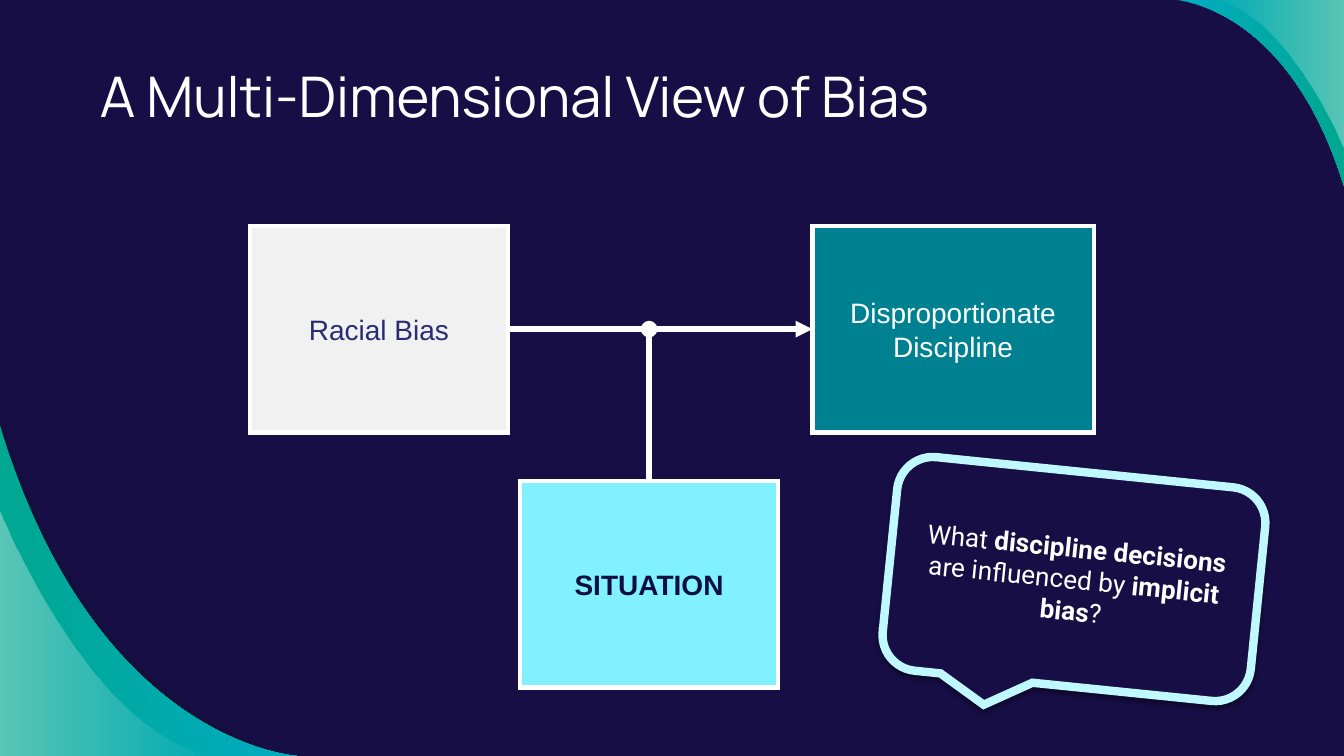
"""Build the slide on the dimensions of bias: three linked boxes and a callout."""
from lxml.etree import SubElement
from pptx import Presentation
from pptx.dml.color import RGBColor
from pptx.enum.shapes import MSO_CONNECTOR, MSO_SHAPE
from pptx.enum.text import MSO_ANCHOR, MSO_AUTO_SIZE, PP_ALIGN
from pptx.oxml import parse_xml
from pptx.oxml.ns import nsdecls, qn
from pptx.util import Inches, Pt

NAVY = RGBColor(0x16, 0x0E, 0x44)
SHADE = RGBColor(0x12, 0x10, 0x2F)
CYAN = RGBColor(0x00, 0xAC, 0xC2)
GREEN = RGBColor(0x00, 0xA7, 0x91)
WHITE = RGBColor(0xFF, 0xFF, 0xFF)
GRAY = RGBColor(0xF1, 0xF1, 0xF1)
TEAL = RGBColor(0x00, 0x81, 0x92)
AQUA = RGBColor(0x81, 0xF1, 0xFF)
ICE = RGBColor(0xC0, 0xF8, 0xFF)
INDIGO = RGBColor(0x29, 0x2C, 0x73)
INK = RGBColor(0x0D, 0x0F, 0x41)
WIDE, HIGH = 40 / 3, 7.5

deck = Presentation()
deck.slide_width, deck.slide_height = Inches(WIDE), Inches(HIGH)
slide = deck.slides.add_slide(deck.slide_layouts[5])
slide.background.fill.solid()
slide.background.fill.fore_color.rgb = NAVY
shapes = slide.shapes

LOW, TOP = (0, HIGH), (WIDE, 0)
for curve, corner, stops in [
    (((0, 4.13), (0.98, 7.39), (3.03, HIGH), (3.03, HIGH)), LOW, [(SHADE, 54)]),
    (((0, 4.22), (0.95, 7.39), (2.95, HIGH), (2.95, HIGH)), LOW, [(GREEN, 100), (CYAN, 100)]),
    (((0, 5.06), (0, 5.06), (0.91, 7.35), (2.16, HIGH)), LOW, [(WHITE, 36), (WHITE, 0)]),
    (((11.67, 0), (11.67, 0), (12.79, 0.06), (WIDE, 1.85)), TOP, [(CYAN, 100), (GREEN, 100)]),
    (((12.01, 0), (12.77, 0.09), (WIDE, 1.49), (WIDE, 1.49)), TOP, [(WHITE, 0), (WHITE, 36)]),
]:
    dots = [(Inches(x), Inches(y)) for x, y in (*curve, corner)]
    pen = shapes.build_freeform(*dots[0], scale=1.0)
    pen.add_line_segments(dots[1:], close=True)
    piece = pen.convert_to_shape()
    piece.shadow.inherit = False
    piece.line.fill.background()
    sides = list(piece._element.spPr.iter(qn("a:lnTo")))[:3]
    bend = SubElement(sides[0].getparent(), qn("a:cubicBezTo"))
    sides[0].addprevious(bend)
    for side in sides:
        bend.append(side[0])
        side.getparent().remove(side)
    if len(stops) == 1:
        piece.fill.solid()
        colors = [piece.fill.fore_color]
    else:
        piece.fill.gradient()
        piece.fill.gradient_angle = 0
        colors = [stop.color for stop in piece.fill.gradient_stops]
    for color, (rgb, _) in zip(colors, stops):
        color.rgb = rgb
    for node, (_, share) in zip(piece._element.spPr.iter(qn("a:srgbClr")), stops):
        if share < 100:
            SubElement(node, qn("a:alpha")).set("val", str(share * 1000))

title = shapes.title
title.left, title.top = Inches(0.89), Inches(0.48)
title.width, title.height = Inches(10.26), Inches(0.92)
frame = title.text_frame
frame.text = "A Multi-Dimensional View of Bias"
frame.auto_size = MSO_AUTO_SIZE.NONE
frame.vertical_anchor = MSO_ANCHOR.MIDDLE
frame.margin_left = frame.margin_right = frame.margin_top = frame.margin_bottom = Inches(0.1)
head = frame.paragraphs[0]
head.alignment = PP_ALIGN.LEFT
head.font.name, head.font.size, head.font.color.rgb = "Manrope", Pt(40), WHITE

boxes = []
for left, top, width, fill, ink, bold, words in [
    (2.48, 2.24, 2.56, GRAY, INDIGO, False, "Racial Bias"),
    (8.06, 2.24, 2.79, TEAL, WHITE, False, "Disproportionate Discipline"),
    (5.16, 4.77, 2.56, AQUA, INK, True, "SITUATION"),
]:
    box = shapes.add_shape(
        MSO_SHAPE.RECTANGLE, Inches(left), Inches(top), Inches(width), Inches(2.05))
    box.shadow.inherit = False
    box.fill.solid()
    box.fill.fore_color.rgb = fill
    box.line.color.rgb, box.line.width = WHITE, Pt(3)
    SubElement(box.line._get_or_add_ln(), qn("a:miter")).set("lim", "800000")
    box.text_frame.text = words
    box.text_frame.word_wrap = True
    box.text_frame.vertical_anchor = MSO_ANCHOR.MIDDLE
    label = box.text_frame.paragraphs[0]
    label.alignment = PP_ALIGN.CENTER
    label.font.name, label.font.size, label.font.bold = "Arial", Pt(20), bold
    label.font.color.rgb = ink
    boxes.append(box)
bias, outcome, context = boxes

mid = bias.top + bias.height // 2
center = context.left + context.width // 2
for source, side, target, end, tip in [
    (bias, 3, outcome, (outcome.left, mid), "triangle"),
    (context, 0, None, (center, mid), "oval"),
]:
    link = shapes.add_connector(MSO_CONNECTOR.STRAIGHT, *end, *end)
    link.begin_connect(source, side)
    if target:
        link.end_connect(target, 1)
    link.line.color.rgb, link.line.width = WHITE, Pt(4)
    SubElement(link.line._get_or_add_ln(), qn("a:tailEnd")).set("type", tip)
    SubElement(link._element.spPr, qn("a:effectLst"))

bubble = shapes.add_shape(
    MSO_SHAPE.ROUNDED_RECTANGULAR_CALLOUT,
    Inches(8.82), Inches(4.68), Inches(3.67), Inches(2.13))
bubble.rotation = 5.8
bubble.fill.solid()
bubble.fill.fore_color.rgb = NAVY
bubble.line.color.rgb, bubble.line.width = ICE, Pt(6)
SubElement(bubble.line._get_or_add_ln(), qn("a:miter")).set("lim", "800000")
bubble._element.spPr.append(parse_xml(
    f'<a:effectLst {nsdecls("a")}><a:outerShdw blurRad="{Pt(3.1)}" dist="{Pt(1.6)}" '
    'dir="5400000" rotWithShape="0"><a:srgbClr val="000000"><a:alpha val="38000"/>'
    '</a:srgbClr></a:outerShdw></a:effectLst>'))
bubble.text_frame.word_wrap = True
bubble.text_frame.vertical_anchor = MSO_ANCHOR.MIDDLE
ask = bubble.text_frame.paragraphs[0]
ask.alignment = PP_ALIGN.CENTER
ask.font.name, ask.font.size, ask.font.color.rgb = "Roboto", Pt(18.7), WHITE
for words, bold in [
    ("What ", False),
    ("discipline decisions ", True),
    ("are influenced by ", False),
    ("implicit bias", True),
    ("?", False),
]:
    run = ask.add_run()
    run.text, run.font.bold = words, bold

deck.save("out.pptx")
